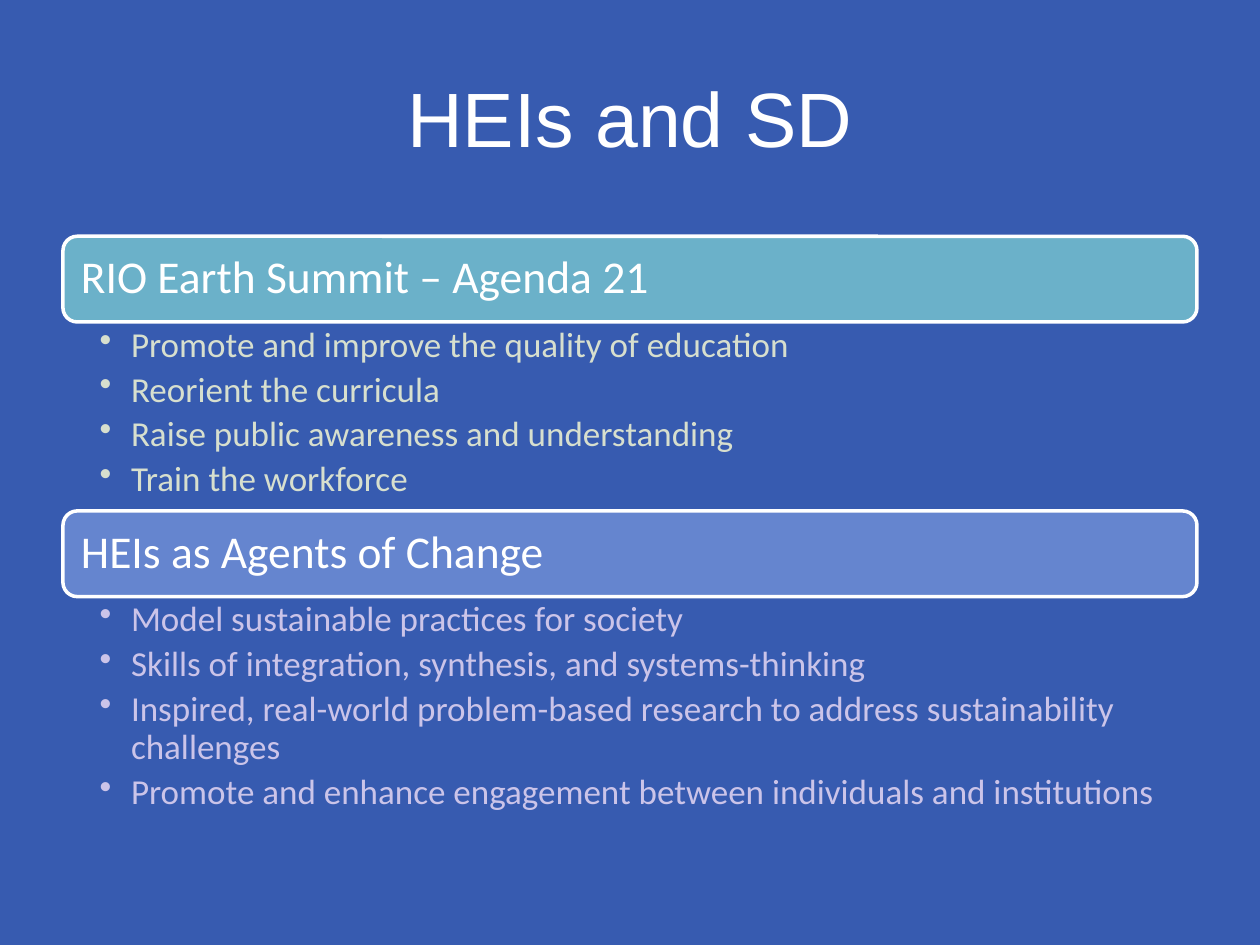
from pptx import Presentation
from pptx.util import Inches, Pt
from pptx.dml.color import RGBColor
from pptx.enum.shapes import MSO_SHAPE
from pptx.enum.text import MSO_ANCHOR, PP_ALIGN
from lxml import etree

ROUNDED = MSO_SHAPE.ROUNDED_RECTANGLE
MIDDLE, TOP = MSO_ANCHOR.MIDDLE, MSO_ANCHOR.TOP
CENTER, LEFT = PP_ALIGN.CENTER, PP_ALIGN.LEFT
DRAWING_NS = "http://schemas.openxmlformats.org/drawingml/2006/main"

THEME = {
    "background": "375BB0", "light": "FFFFFF",
    "title_font": "Arial", "body_font": "Calibri",
    "title_size": 44, "heading_size": 26, "bullet_size": 20,
}

WIDTH, HEIGHT = Inches(10), Inches(7.5)
MARGIN = int(WIDTH * 0.05)
CONTENT_WIDTH = WIDTH - 2 * MARGIN
HEADING_HEIGHT = Inches(0.68)

SECTIONS = [
    ("RIO Earth Summit – Agenda 21", "6BB1C9", "D7DFCE", 1.5, [
        "Promote and improve the quality of education",
        "Reorient the curricula",
        "Raise public awareness and understanding",
        "Train the workforce",
    ]),
    ("HEIs as Agents of Change", "6585CF", "CBC4E9", 1.82, [
        "Model sustainable practices for society",
        "Skills of integration, synthesis, and systems-thinking",
        "Inspired, real-world problem-based research to address sustainability challenges",
        "Promote and enhance engagement between individuals and institutions",
    ]),
]


def set_frame(frame, anchor, left, top, right, bottom):
    frame.word_wrap = True
    frame.vertical_anchor = anchor
    frame.margin_left, frame.margin_top = Inches(left), Inches(top)
    frame.margin_right, frame.margin_bottom = Inches(right), Inches(bottom)


def style(paragraph, font, size, color, align=LEFT):
    paragraph.alignment = align
    for run in paragraph.runs:
        run.font.name = font
        run.font.size = Pt(size)
        run.font.color.rgb = RGBColor.from_string(color)


prs = Presentation()
prs.slide_width, prs.slide_height = WIDTH, HEIGHT
slide = prs.slides.add_slide(prs.slide_layouts[6])
slide.background.fill.solid()
slide.background.fill.fore_color.rgb = RGBColor.from_string(THEME["background"])

title = slide.shapes.add_textbox(MARGIN, int(HEIGHT * 0.04), CONTENT_WIDTH, Inches(1.25))
set_frame(title.text_frame, MIDDLE, 0.1, 0.05, 0.1, 0.05)
title.text_frame.text = "HEIs and SD"
style(title.text_frame.paragraphs[0], THEME["title_font"], THEME["title_size"],
      THEME["light"], CENTER)

top = int(HEIGHT * 0.25)
for topic, fill, bullet_color, list_height, points in SECTIONS:
    heading = slide.shapes.add_shape(ROUNDED, MARGIN, top, CONTENT_WIDTH, HEADING_HEIGHT)
    heading.shadow.inherit = False
    heading.fill.solid()
    heading.fill.fore_color.rgb = RGBColor.from_string(fill)
    heading.line.color.rgb = RGBColor.from_string(THEME["light"])
    heading.line.width = Pt(2)
    set_frame(heading.text_frame, MIDDLE, 0.11, 0.05, 0.11, 0.05)
    heading.text_frame.text = topic
    heading.text_frame.paragraphs[0].line_spacing = 0.9
    style(heading.text_frame.paragraphs[0], THEME["body_font"], THEME["heading_size"],
          THEME["light"])
    top += HEADING_HEIGHT

    details = slide.shapes.add_textbox(MARGIN, top, CONTENT_WIDTH, Inches(list_height))
    set_frame(details.text_frame, TOP, 0.29, 0.04, 0.2, 0.04)
    details.text_frame.text = "\n".join(points)
    for point in details.text_frame.paragraphs:
        properties = point._p.get_or_add_pPr()
        properties.set("marL", str(Inches(0.25)))
        properties.set("indent", str(-Inches(0.25)))
        etree.SubElement(properties, f"{{{DRAWING_NS}}}buChar", char="•")
        point.level = 1
        point.line_spacing = 0.9
        point.space_after = Pt(4)
        style(point, THEME["body_font"], THEME["bullet_size"], bullet_color)
    top += Inches(list_height)

prs.save("out.pptx")
